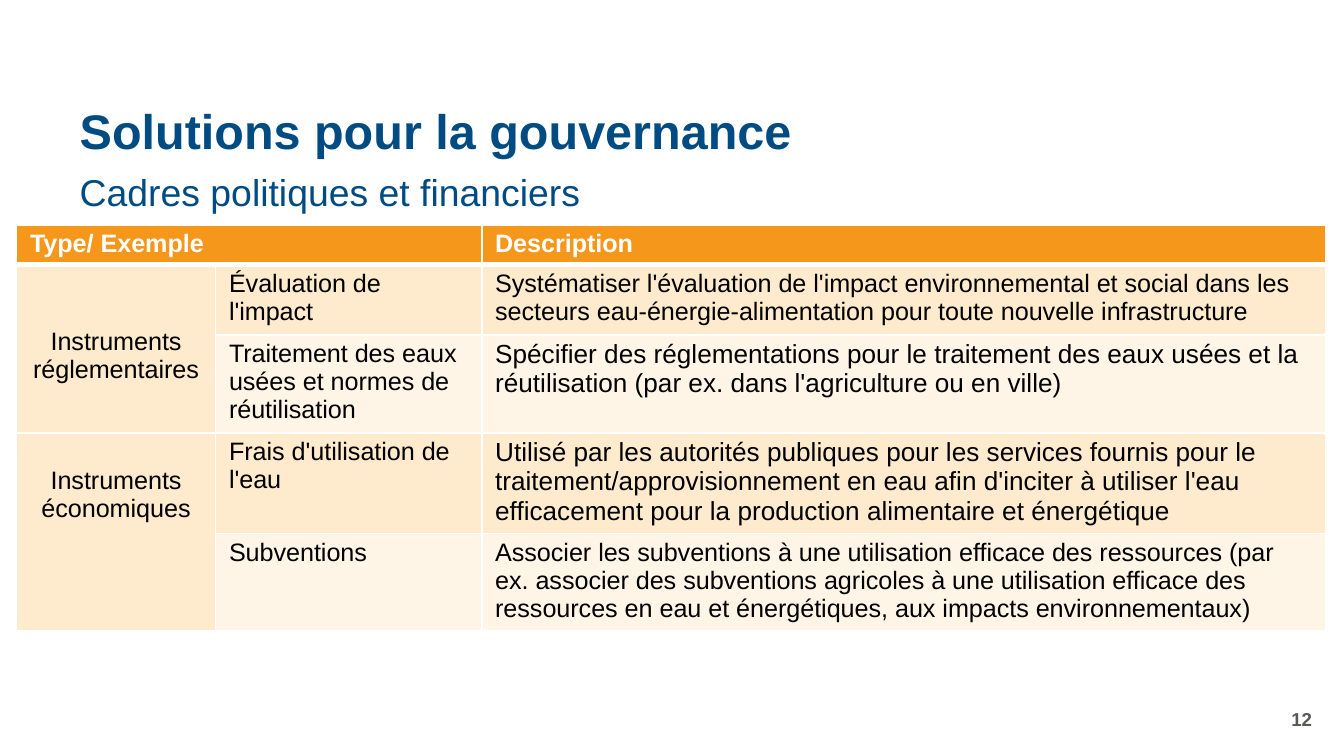
from lxml import etree
from pptx import Presentation
from pptx.dml.color import RGBColor
from pptx.enum.text import MSO_ANCHOR, MSO_AUTO_SIZE, PP_ALIGN
from pptx.oxml.ns import qn
from pptx.util import Pt

LEFT, CENTER, RIGHT = PP_ALIGN.LEFT, PP_ALIGN.CENTER, PP_ALIGN.RIGHT
TOP, MIDDLE = MSO_ANCHOR.TOP, MSO_ANCHOR.MIDDLE
NO_AUTOFIT = MSO_AUTO_SIZE.NONE

COLORS = {
    "navy": "004C82",
    "grey": "575756",
    "orange": "F4971A",
    "peach": "FEEACC",
    "cream": "FFF5E7",
    "white": "FFFFFF",
    "black": "000000",
}
FONT = "Arial"
CELL_SIZE = 13.5
CELL_MARGIN = 2.7
LINE_HEIGHT = 15.5  # one line of cell text


class GovernanceSlide:
    def __init__(self, presentation):
        self.slide = presentation.slides.add_slide(presentation.slide_layouts[1])

    def set_text(self, frame, text, size, color, bold=False, align=LEFT, spacing=None):
        frame.word_wrap = True
        paragraph = frame.paragraphs[0]
        paragraph.text = text
        paragraph.alignment = align
        if spacing:
            paragraph.line_spacing = spacing
            paragraph.space_before = Pt(0)
        font = paragraph.font
        font.name, font.size, font.bold = FONT, Pt(size), bold
        font.color.rgb = RGBColor.from_string(COLORS[color])

    def place(self, shape, box, margins, anchor):
        shape.left, shape.top, shape.width, shape.height = map(Pt, box)
        frame = shape.text_frame
        frame.auto_size = NO_AUTOFIT
        frame.vertical_anchor = anchor
        (frame.margin_left, frame.margin_top,
         frame.margin_right, frame.margin_bottom) = map(Pt, margins)
        return frame

    def title(self, text, box):
        frame = self.place(self.slide.shapes.title, box, (7.2, 3.6, 7.2, 3.6), MIDDLE)
        self.set_text(frame, text, 26, "navy", bold=True, spacing=0.9)

    def subtitle(self, text, box):
        frame = self.place(self.slide.placeholders[1], box, (7.2, 0, 5.76, 0), TOP)
        properties = frame.paragraphs[0]._p.get_or_add_pPr()
        properties.set("marL", "0")
        properties.set("indent", "0")
        etree.SubElement(properties, qn("a:buNone"))
        self.set_text(frame, text, 20, "navy", spacing=0.9)

    def page_number(self, text, box):
        number = self.slide.shapes.add_textbox(*map(Pt, box))
        frame = self.place(number, box, (7.2, 3.6, 7.2, 3.6), MIDDLE)
        self.set_text(frame, text, 10, "grey", bold=True, align=RIGHT)

    def table(self, left, top, columns, rows):
        frame = self.slide.shapes.add_table(
            len(rows), len(columns), Pt(left), Pt(top), Pt(sum(columns)), Pt(sum(rows)))
        table = frame.table
        table.horz_banding = False
        for column, width in zip(table.columns, columns):
            column.width = Pt(width)
        for row, height in zip(table.rows, rows):
            row.height = Pt(height)
        return table

    def cell(self, cell, text, fill, size=CELL_SIZE, color="black", bold=False,
             align=LEFT, lines_above=0, bottom_border=1):
        cell.margin_left = cell.margin_right = Pt(7.2)
        cell.margin_top = Pt(CELL_MARGIN + lines_above * LINE_HEIGHT)
        cell.margin_bottom = Pt(CELL_MARGIN)
        self.borders(cell, bottom_border)
        cell.fill.solid()
        cell.fill.fore_color.rgb = RGBColor.from_string(COLORS[fill])
        if text:
            self.set_text(cell.text_frame, text, size, color, bold, align)

    def borders(self, cell, bottom):
        properties = cell._tc.get_or_add_tcPr()
        for side, width in (("L", 1), ("R", 1), ("T", 1), ("B", bottom)):
            line = etree.SubElement(properties, qn(f"a:ln{side}"), w=str(Pt(width)))
            solid = etree.SubElement(line, qn("a:solidFill"))
            etree.SubElement(solid, qn("a:srgbClr"), val=COLORS["white"])


# First row of each group, its name, and the lines left free above the name
GROUPS = [
    (1, "Instruments réglementaires", 2),
    (3, "Instruments économiques", 1),
]
# Example, description, size of the description
INSTRUMENTS = [
    ("Évaluation de l'impact",
     "Systématiser l'évaluation de l'impact environnemental et social dans les "
     "secteurs eau-énergie-alimentation pour toute nouvelle infrastructure", 13.5),
    ("Traitement des eaux usées et normes de réutilisation",
     "Spécifier des réglementations pour le traitement des eaux usées et la "
     "réutilisation (par ex. dans l'agriculture ou en ville)", 14),
    ("Frais d'utilisation de l'eau",
     "Utilisé par les autorités publiques pour les services fournis pour le "
     "traitement/approvisionnement en eau afin d'inciter à utiliser l'eau "
     "efficacement pour la production alimentaire et énergétique", 14),
    ("Subventions",
     "Associer les subventions à une utilisation efficace des ressources (par ex. "
     "associer des subventions agricoles à une utilisation efficace des ressources "
     "en eau et énergétiques, aux impacts environnementaux)", 13.5),
]


def main():
    presentation = Presentation()
    presentation.slide_width, presentation.slide_height = Pt(720), Pt(405)
    page = GovernanceSlide(presentation)

    # Headings
    page.title("Solutions pour la gouvernance", (35.5, 50.2, 674.5, 42.5))
    page.subtitle("Cadres politiques et financiers", (35.5, 93.5, 674.5, 21.6))

    # Table header
    table = page.table(8.9, 120.4, [106.6, 142.6, 452.2], [21.5, 37.5, 52.5, 54, 52])
    table.cell(0, 0).merge(table.cell(0, 1))
    for column, heading in enumerate(("Type/ Exemple", "", "Description")):
        page.cell(table.cell(0, column), heading, "orange", color="white",
                  bold=True, bottom_border=3)

    # Instrument groups
    for row, group, lines_above in GROUPS:
        table.cell(row, 0).merge(table.cell(row + 1, 0))
        page.cell(table.cell(row, 0), group, "peach", align=CENTER,
                  lines_above=lines_above)
        page.cell(table.cell(row + 1, 0), "", "peach")

    # Examples and descriptions
    for row, (example, description, size) in enumerate(INSTRUMENTS, start=1):
        fill = "peach" if row % 2 else "cream"
        page.cell(table.cell(row, 1), example, fill)
        page.cell(table.cell(row, 2), description, fill, size=size)

    # Page number
    page.page_number("12", (548, 374.4, 162, 21.6))

    presentation.save("out.pptx")


if __name__ == "__main__":
    main()
